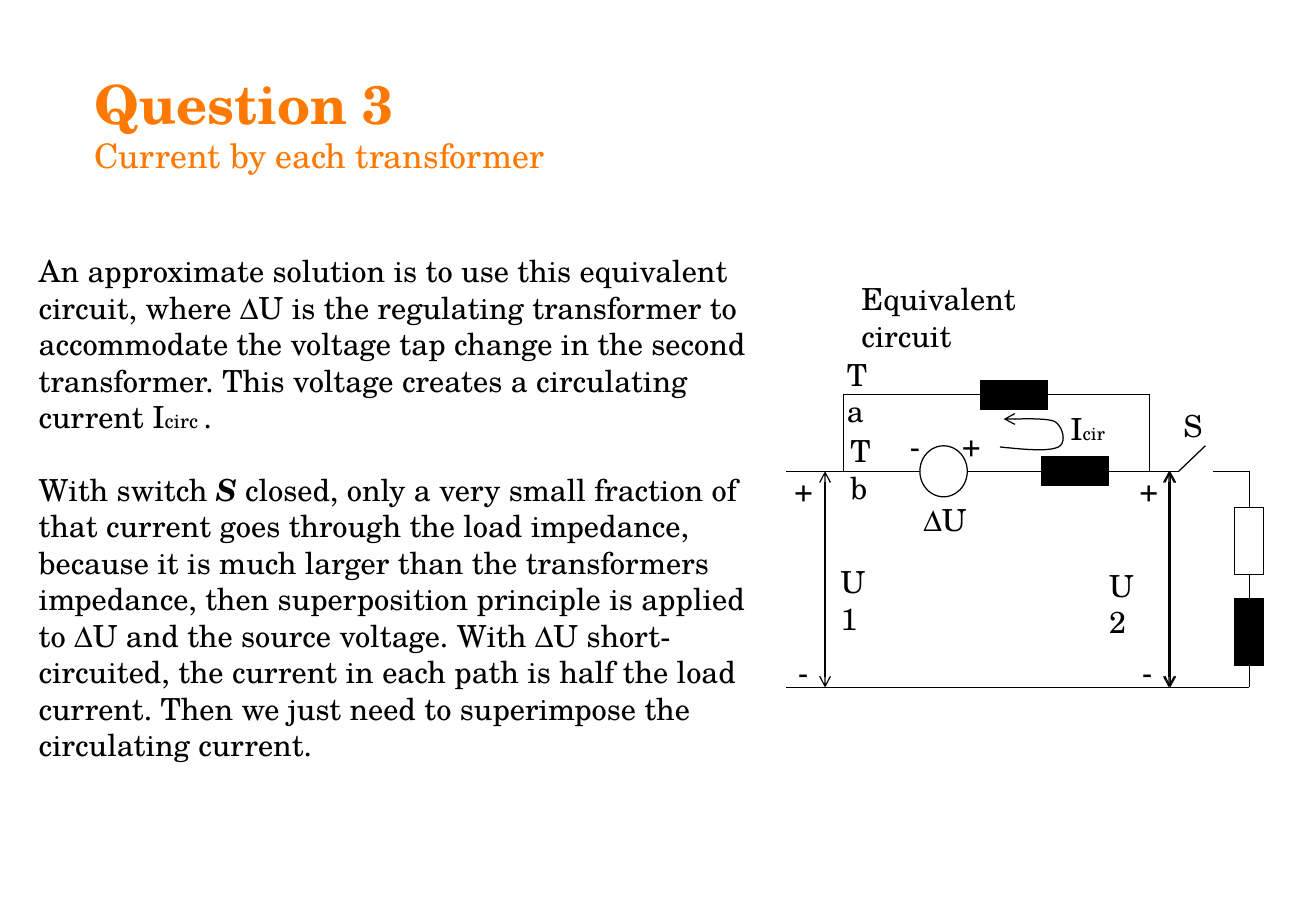
from dataclasses import dataclass

from lxml.etree import SubElement
from pptx import Presentation
from pptx.dml.color import RGBColor as RGB
from pptx.enum.shapes import MSO_CONNECTOR as CONN, MSO_SHAPE as SHAPE
from pptx.oxml.ns import qn
from pptx.util import Inches, Pt


@dataclass(frozen=True)
class Theme:
    font: str = "TeX Gyre Schola"
    accent: RGB = RGB(0xFF, 0x79, 0x00)
    ink: RGB = RGB(0, 0, 0)
    paper: RGB = RGB(0xFF, 0xFF, 0xFF)
    title: float = 32
    subtitle: float = 20
    body: float = 18
    body_sub: float = 12
    label_sub: float = 11
    stroke: float = 0.75
    gap: float = 21.6


class CircuitSlide:
    def __init__(self, prs, theme):
        self.theme = theme
        self.slide = prs.slides.add_slide(prs.slide_layouts[6])
        self.shapes = self.slide.shapes

    def text(self, x, y, w, h, paragraphs, color=None):
        tf = self.shapes.add_textbox(*map(Inches, (x, y, w, h))).text_frame
        tf.word_wrap = True
        for i, runs in enumerate(paragraphs):
            p = tf.add_paragraph() if i else tf.paragraphs[0]
            if i:
                p.space_before = Pt(self.theme.gap)
            for content, size, bold, italic in runs:
                if content == "\n":
                    p.add_line_break()
                    continue
                r = p.add_run()
                r.text = content
                r.font.name = self.theme.font
                r.font.size = Pt(size)
                r.font.bold = bold
                r.font.italic = italic
                r.font.color.rgb = color or self.theme.ink

    def label(self, content, x, y, w, sub=""):
        runs = [(content, self.theme.body, False, False)]
        if sub:
            runs.append((sub, self.theme.label_sub, False, False))
        self.text(x, y, w, 0.4, [runs])

    def outline(self, s, arrows=()):
        s.line.color.rgb = self.theme.ink
        s.line.width = Pt(self.theme.stroke)
        ln = s._element.spPr.find(qn("a:ln"))
        for end in arrows:
            SubElement(ln, qn(f"a:{end}"), type="arrow")

    def wire(self, x1, y1, x2, y2, arrows=()):
        s = self.shapes.add_connector(CONN.STRAIGHT, *map(Inches, (x1, y1, x2, y2)))
        self.outline(s, arrows)
        SubElement(s._element.spPr, qn("a:effectLst"))

    def component(self, kind, x, y, w, h, fill):
        s = self.shapes.add_shape(kind, *map(Inches, (x, y, w, h)))
        s.shadow.inherit = False
        s.fill.solid()
        s.fill.fore_color.rgb = fill
        self.outline(s)

    def curve(self, start, beziers, steps=10):
        points = [start]
        for b, c, d in beziers:
            a = points[-1]
            for i in range(1, steps + 1):
                t = i / steps
                u = 1 - t
                weights = (u**3, 3 * u * u * t, 3 * u * t * t, t**3)
                points.append(tuple(sum(k * q for k, q in zip(weights, axis))
                                    for axis in zip(a, b, c, d)))
        emu = [(Inches(x), Inches(y)) for x, y in points]
        builder = self.shapes.build_freeform(*emu[0])
        builder.add_line_segments(emu[1:], close=False)
        s = builder.convert_to_shape()
        s.shadow.inherit = False
        s.fill.background()
        self.outline(s, ("tailEnd",))


def add_text(cs, t):
    cs.text(0.68, 0.53, 9.46, 1.18, [[
        ("Question 3 ", t.title, True, False),
        ("\n", t.title, True, False),
        ("Current by each transformer", t.subtitle, False, False),
    ]], t.accent)
    cs.text(0.22, 2.03, 6.21, 4.04, [
        [("An approximate solution is to use this equivalent circuit, where ΔU is "
          "the regulating transformer to accommodate the voltage tap change in the "
          "second transformer. This voltage creates a circulating current I",
          t.body, False, False),
         ("circ ", t.body_sub, False, False),
         (".", t.body, False, False)],
        [("With switch ", t.body, False, False),
         ("S", t.body, True, True),
         (" closed, only a very small fraction of that current goes through the "
          "load impedance, because it is much larger than the transformers "
          "impedance, then superposition principle is applied to ΔU and the source "
          "voltage. With ΔU short-circuited, the current in each path is half the "
          "load current. Then we just need to superimpose the circulating current.",
          t.body, False, False)],
    ])


def add_circuit(cs, t):
    left, right, top, mid, bottom = 6.47, 10.28, 3.25, 3.88, 5.66
    branch_a, branch_b, switch = 6.94, 9.46, 9.7
    long, short = 0.55, 0.24

    for ends in [
        (left, mid, switch, mid),
        (branch_a, mid, branch_a, top),
        (branch_a, top, branch_b, top),
        (branch_b, mid, branch_b, top),
        (switch, mid, 9.92, 3.67),
        (9.98, mid, right, mid),
        (right, mid, right, bottom),
        (right, bottom, left, bottom),
    ]:
        cs.wire(*ends)
    for x in (6.79, 9.62, 9.63):
        cs.wire(x, mid, x, bottom, ("headEnd", "tailEnd"))

    for x, y in ((8.57, mid), (8.07, top)):
        cs.component(SHAPE.RECTANGLE, x, y - short / 2, long, short, t.ink)
    for y, fill in ((4.18, t.paper), (4.93, t.ink)):
        cs.component(SHAPE.RECTANGLE, right - short / 2, y, short, long, fill)
    cs.component(SHAPE.OVAL, 7.57, 3.67, 0.39, 0.42, t.paper)

    cs.curve((8.23, 3.68), [
        ((8.43, 3.7), (8.63, 3.72), (8.71, 3.68)),
        ((8.78, 3.65), (8.75, 3.51), (8.68, 3.47)),
        ((8.61, 3.44), (8.43, 3.45), (8.26, 3.45)),
    ])

    for label in [
        ("U1", 6.82, 4.59, 0.5),
        ("U2", 9.03, 4.62, 0.5),
        ("Ta", 6.87, 2.88, 0.49),
        ("Tb", 6.9, 3.51, 0.5),
        ("ΔU", 7.5, 4.08, 0.58),
        ("+", 7.82, 3.46, 0.36),
        ("-", 7.39, 3.47, 0.3),
        ("+", 6.44, 3.83, 0.36),
        ("-", 6.47, 5.33, 0.3),
        ("+", 9.28, 3.83, 0.36),
        ("-", 9.3, 5.33, 0.3),
        ("I", 8.71, 3.33, 0.55, "circ"),
        ("Equivalent circuit", 6.99, 2.26, 2.19),
        ("S", 9.64, 3.3, 0.36),
    ]:
        cs.label(*label)


def main():
    prs = Presentation()
    prs.slide_width, prs.slide_height = Inches(10.83), Inches(7.5)
    theme = Theme()
    cs = CircuitSlide(prs, theme)
    add_text(cs, theme)
    add_circuit(cs, theme)
    prs.save("out.pptx")


if __name__ == "__main__":
    main()
